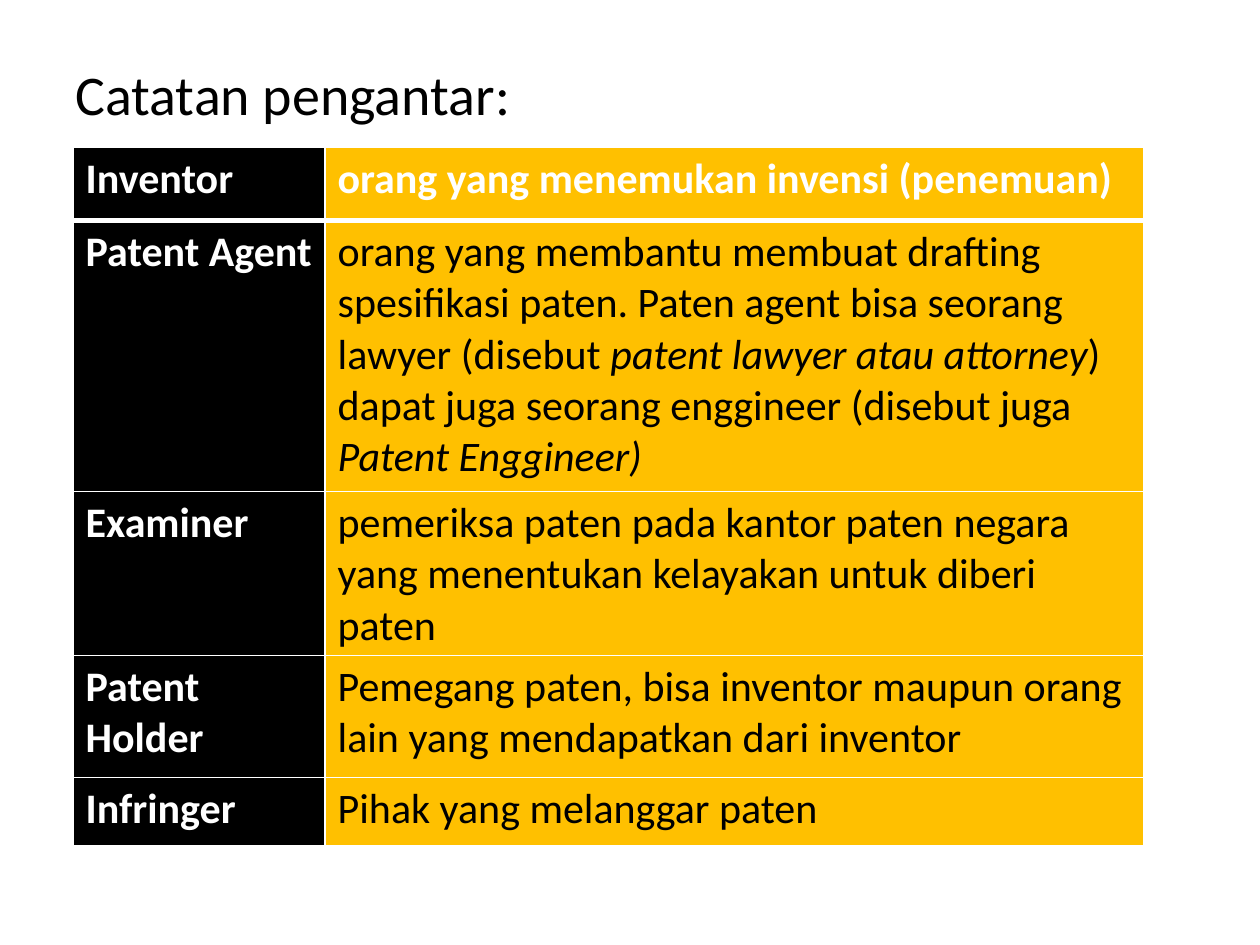
from dataclasses import dataclass

from lxml import etree
from pptx import Presentation
from pptx import util as u
from pptx.dml.color import RGBColor
from pptx.oxml.ns import qn


@dataclass(frozen=True)
class Theme:
    font: str = "Calibri"
    head: int = 32
    body: int = 24
    black: str = "000000"
    white: str = "FFFFFF"
    gold: str = "FFC000"
    thin: int = 1
    thick: int = 3


THEME = Theme()
COLS = (2, 6.5)
ROWS = (0.58, 2.15, 1.3, 0.97, 0.54)
ROLES = (
    ("Inventor", ["orang yang menemukan invensi (penemuan)"]),
    ("Patent Agent", [
        "orang yang membantu membuat drafting spesifikasi paten. "
        "Paten agent bisa seorang lawyer (disebut ",
        "patent lawyer atau attorney",
        ") dapat juga seorang enggineer (disebut juga ",
        "Patent Enggineer)",
    ]),
    ("Examiner", ["pemeriksa paten pada kantor paten negara yang "
                  "menentukan kelayakan untuk diberi paten"]),
    ("Patent Holder", ["Pemegang paten, bisa inventor maupun orang lain "
                       "yang mendapatkan dari inventor"]),
    ("Infringer", ["Pihak yang melanggar paten"]),
)


def style(run, size, color, bold=False, italic=False):
    font = run.font
    font.name, font.size = THEME.font, u.Pt(size)
    font.bold, font.italic = bold, italic
    font.color.rgb = RGBColor.from_string(color)


def edge(cell, top, base):
    props = cell._tc.get_or_add_tcPr()
    widths = {"L": THEME.thin, "R": THEME.thin, "T": top, "B": base}
    for spot, (side, width) in enumerate(widths.items()):
        line = etree.Element(qn(f"a:ln{side}"), w=str(u.Pt(width)))
        fill = etree.SubElement(line, qn("a:solidFill"))
        etree.SubElement(fill, qn("a:srgbClr"), val=THEME.white)
        props.insert(spot, line)


def paint(cell, parts, fill, color, bold):
    cell.fill.solid()
    cell.fill.fore_color.rgb = RGBColor.from_string(fill)
    para = cell.text_frame.paragraphs[0]
    for spot, part in enumerate(parts):
        run = para.add_run()
        run.text = part
        style(run, THEME.body, color, bold, italic=spot % 2 == 1)


def add_title(slide, box):
    frame = slide.shapes.add_textbox(*map(u.Inches, box)).text_frame
    frame.word_wrap = True
    frame.text = "Catatan pengantar:"
    style(frame.paragraphs[0].runs[0], THEME.head, THEME.black)


def add_roles(slide, box):
    left, top, width, height = box
    grid = slide.shapes.add_table(
        len(ROLES), len(COLS), *map(u.Inches, box)).table
    for col, share in zip(grid.columns, COLS):
        col.width = u.Inches(width * share / sum(COLS))
    for row, share in zip(grid.rows, ROWS):
        row.height = u.Inches(height * share / sum(ROWS))
    for spot, (role, parts) in enumerate(ROLES):
        first = spot == 0
        name, note = grid.cell(spot, 0), grid.cell(spot, 1)
        paint(name, [role], THEME.black, THEME.white, True)
        paint(note, parts, THEME.gold,
              THEME.white if first else THEME.black, first)
        for cell in (name, note):
            edge(cell, THEME.thick if spot == 1 else THEME.thin,
                 THEME.thick if first else THEME.thin)


def main():
    deck = Presentation()
    deck.slide_width, deck.slide_height = u.Inches(10), u.Inches(7.5)
    slide = deck.slides.add_slide(deck.slide_layouts[6])
    add_title(slide, (0.5, 0.42, 9, 6.28))
    add_roles(slide, (0.58, 1.17, 8.5, 5.54))
    deck.save("out.pptx")


if __name__ == "__main__":
    main()
